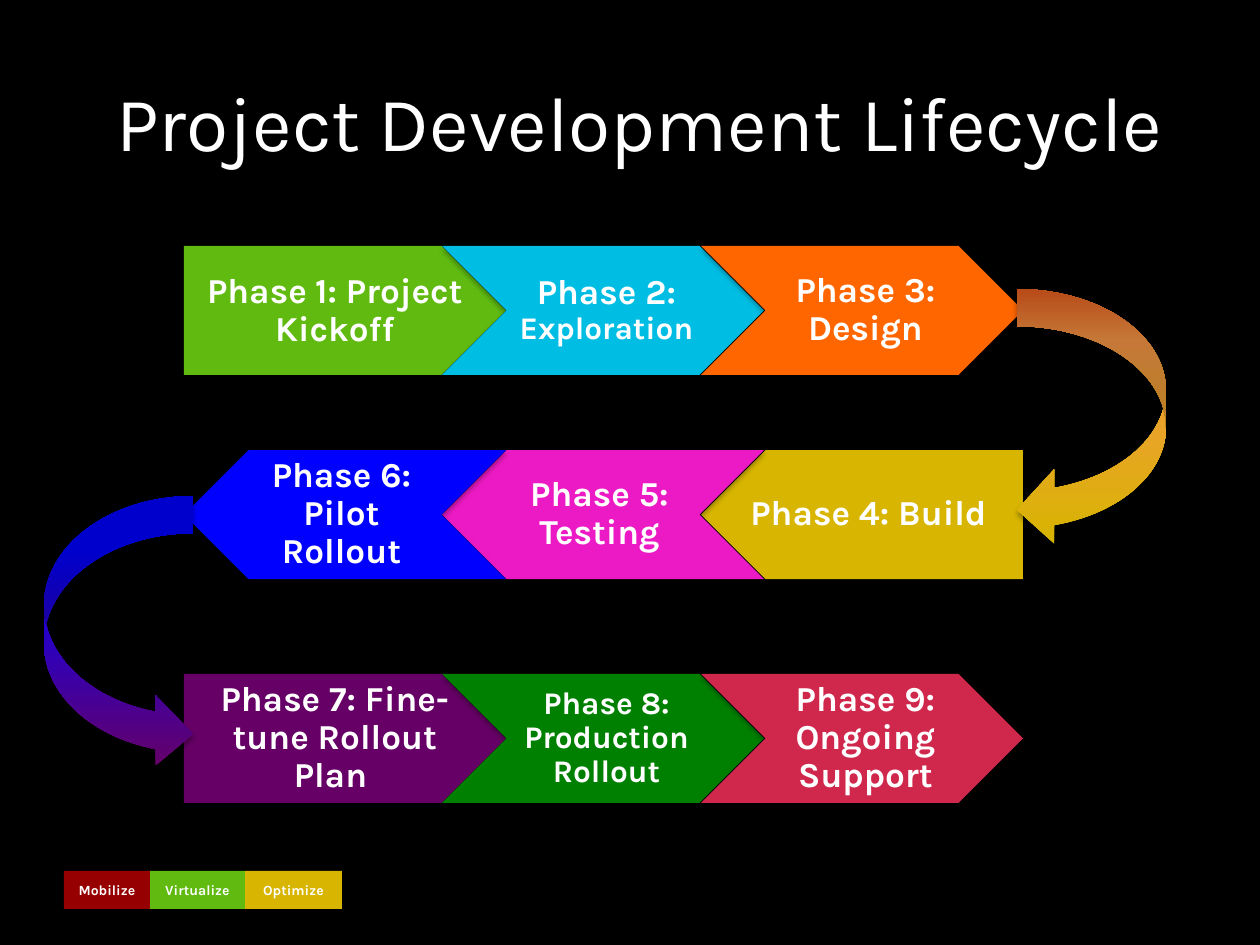
import pptx
import pptx.dml.color
import pptx.enum.shapes
import pptx.enum.text
import pptx.oxml
import pptx.oxml.ns
import pptx.util

PX = 914400 / 126
SHAPES = pptx.enum.shapes.MSO_SHAPE
THEME = {
    "font": "Karla", "space_font": "Calibri",
    "background": "000000", "text": "FFFFFF",
    "green": "60BA10", "cyan": "00BDE3", "orange": "FF6600",
    "gold": "D7B500", "pink": "EC1AC4", "blue": "0000FF",
    "purple": "660066", "dark_green": "008000", "crimson": "D0284D", "red": "970000",
    "light_orange": "F79646", "burnt_orange": "E65E20",
    "title": 44, "phase": 20, "phase_small": 18, "space": 21, "legend": 8,
}
NAMESPACE = pptx.oxml.ns.nsdecls("a")
SHADOW = (
    f'<a:outerShdw {NAMESPACE} blurRad="39370" dist="22860" dir="5400000" rotWithShape="0">'
    '<a:srgbClr val="000000"><a:alpha val="35000"/></a:srgbClr></a:outerShdw>'
)


def add_text(shape, runs, size, bold=True, insets=(13, 6, 13, 6), line_spacing=None, space_after=None):
    frame = shape.text_frame
    frame.word_wrap = True
    frame.vertical_anchor = pptx.enum.text.MSO_ANCHOR.MIDDLE
    frame.margin_left, frame.margin_top, frame.margin_right, frame.margin_bottom = (
        round(inset * PX) for inset in insets)
    paragraph = frame.paragraphs[0]
    paragraph.alignment = pptx.enum.text.PP_ALIGN.CENTER
    if line_spacing:
        paragraph.line_spacing = line_spacing
    if space_after:
        paragraph.space_after = pptx.util.Pt(space_after)
    for text, changes in runs:
        run = paragraph.add_run()
        run.text = text
        run.font.name = changes.get("font", THEME["font"])
        run.font.size = pptx.util.Pt(changes.get("size", size))
        run.font.bold = changes.get("bold", bold)
        run.font.color.rgb = pptx.dml.color.RGBColor.from_string(THEME["text"])


def add_block(kind, box, color, shadow=True):
    shape = slide.shapes.add_shape(kind, *(round(length * PX) for length in box))
    shape.fill.solid()
    shape.fill.fore_color.rgb = pptx.dml.color.RGBColor.from_string(THEME[color])
    shape.line.fill.background()
    shape.shadow.inherit = False
    if shadow:
        effects = shape._element.spPr.find(pptx.oxml.ns.qn("a:effectLst"))
        effects.append(pptx.oxml.parse_xml(SHADOW))
    return shape


presentation = pptx.Presentation()
presentation.slide_width = round(1260 * PX)
presentation.slide_height = round(945 * PX)
slide = presentation.slides.add_slide(presentation.slide_layouts[6])
slide.background.fill.solid()
slide.background.fill.fore_color.rgb = pptx.dml.color.RGBColor.from_string(THEME["background"])

legend = [("Mobilize", "red", 64, 86), ("Virtualize", "green", 150, 95), ("Optimize", "gold", 245, 97)]
for label, color, left, width in legend:
    shape = add_block(SHAPES.RECTANGLE, (left, 871, width, 38), color, shadow=False)
    add_text(shape, [(label, {})], THEME["legend"])

title = slide.shapes.add_textbox(*(round(length * PX) for length in (73, 42, 1134, 158)))
add_text(title, [("Project Development Lifecycle", {})], THEME["title"], bold=False)

small = {"size": THEME["phase_small"]}
space = {"size": THEME["space"], "font": THEME["space_font"], "bold": False}
rows = [
    (246, False, [
        ("green", [("Phase", {}), (" ", space), ("1: Project Kickoff", {})]),
        ("cyan", [("Phase 2: ", {}), ("Exploration", small)]),
        ("orange", [("Phase 3: Design", {})]),
    ]),
    (450, True, [
        ("gold", [("Phase 4: Build ", {})]),
        ("pink", [("Phase 5: Testing", {})]),
        ("blue", [("Phase 6: Pilot Rollout", {})]),
    ]),
    (674, False, [
        ("purple", [("Phase 7: Fine-tune Rollout Plan ", {})]),
        ("dark_green", [("Phase 8: Production Rollout", small)]),
        ("crimson", [("Phase 9: Ongoing Support", {})]),
    ]),
]
column_lefts = (184, 442, 701)
phase_width, phase_height = 322, 129
for top, reverse, phases in rows:
    lefts = column_lefts[::-1] if reverse else column_lefts
    for index, (left, (color, runs)) in enumerate(zip(lefts, phases)):
        first = index == 0
        kind = SHAPES.PENTAGON if first else SHAPES.CHEVRON
        shape = add_block(kind, (left, top, phase_width, phase_height), color)
        shape.rotation = 180 if reverse else 0
        if first:
            text_left, text_width, tail_inset = left + 32 * reverse, 291, 15
        else:
            text_left, text_width, tail_inset = left + 64, 194, 11
        insets = (4, 8, tail_inset, 8) if reverse else (tail_inset, 8, 4, 8)
        box = (text_left, top, text_width, phase_height)
        label = slide.shapes.add_textbox(*(round(length * PX) for length in box))
        add_text(label, runs, THEME["phase"], insets=insets, line_spacing=0.9, space_after=7)

turns = [
    (SHAPES.CURVED_LEFT_ARROW, (1017, 289, 149, 258), (0.25, 0.5, 0.25),
     ("gold", "light_orange", "burnt_orange")),
    (SHAPES.CURVED_RIGHT_ARROW, (44, 496, 149, 273), (0.25, 0.47, 0.25),
     ("purple", "blue", "blue")),
]
for kind, box, adjustments, colors in turns:
    arrow = add_block(kind, box, colors[0])
    for index, value in enumerate(adjustments):
        arrow.adjustments[index] = value
    arrow.fill.gradient()
    arrow.fill.gradient_angle = 90
    stops = arrow._element.spPr.find(".//" + pptx.oxml.ns.qn("a:gsLst"))
    for stop in list(stops):
        stops.remove(stop)
    for position, color in zip((0, 80, 100), colors):
        stops.append(pptx.oxml.parse_xml(
            f'<a:gs {NAMESPACE} pos="{position * 1000}"><a:srgbClr val="{THEME[color]}"/></a:gs>'))

presentation.save("out.pptx")
